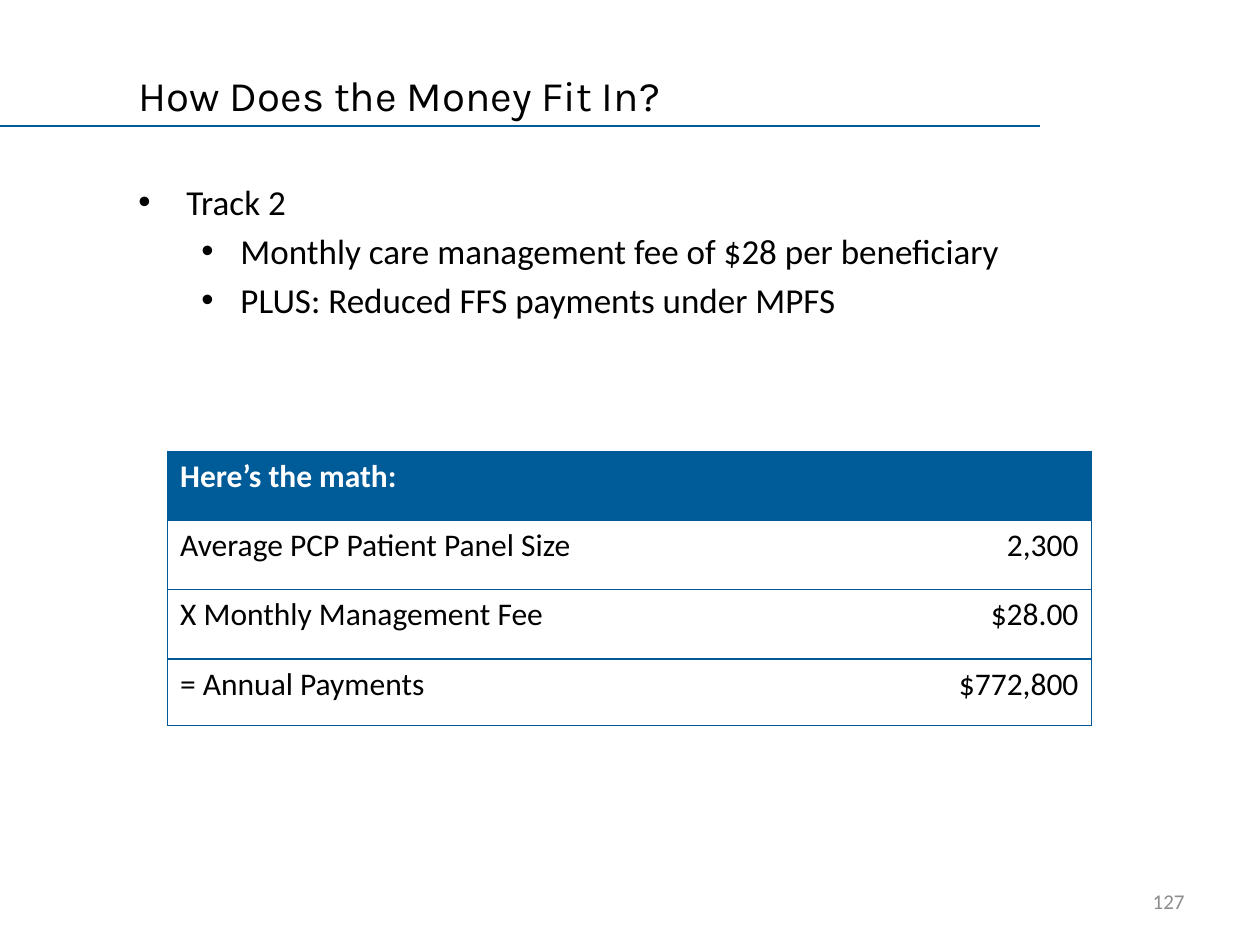
from dataclasses import dataclass

from lxml import etree
from pptx import Presentation
from pptx.dml.color import RGBColor
from pptx.enum import shapes, text
from pptx.oxml import ns
from pptx.util import Inches, Pt

RULE_BLUE = "005B99"
TABLE_BLUE = "005996"
BLACK, WHITE, GRAY = "000000", "FFFFFF", "8C8C8C"


@dataclass
class Bullet:
    words: str
    margin: float
    hanging: float


@dataclass
class MathRow:
    label: str
    value: str
    height: float = 0.55


BULLETS = [
    Bullet("Track 2", 0.38, 0.38),
    Bullet("Monthly care management fee of $28 per beneficiary", 0.81, 0.31),
    Bullet("PLUS: Reduced FFS payments under MPFS", 0.81, 0.31),
]
MATH_ROWS = [
    MathRow("Here’s the math:", ""),
    MathRow("Average PCP Patient Panel Size", "2,300"),
    MathRow("X Monthly Management Fee", "$28.00"),
    MathRow("= Annual Payments", "$772,800", 0.53),
]


def rgb(value: str) -> RGBColor:
    return RGBColor.from_string(value)


def add_child(parent, tag: str, **attributes: str):
    return etree.SubElement(parent, ns.qn(tag), **attributes)


def write(paragraph, words: str, size: float = 20, font: str = "Calibri",
          color: str = BLACK, bold: bool = False,
          align=text.PP_ALIGN.LEFT) -> None:
    paragraph.alignment = align
    run = paragraph.add_run()
    run.text = words
    run.font.size = Pt(size)
    run.font.name = font
    run.font.bold = bold
    run.font.color.rgb = rgb(color)


def add_text_frame(slide, left: float, top: float, width: float, height: float,
                   anchor=text.MSO_ANCHOR.TOP):
    shape = slide.shapes.add_textbox(
        Inches(left), Inches(top), Inches(width), Inches(height))
    shape.text_frame.word_wrap = True
    shape.text_frame.vertical_anchor = anchor
    return shape.text_frame


def set_bullet(paragraph, bullet: Bullet) -> None:
    properties = paragraph._p.get_or_add_pPr()
    properties.set("marL", str(Inches(bullet.margin)))
    properties.set("indent", str(-Inches(bullet.hanging)))
    add_child(properties, "a:buFont", typeface="Arial")
    add_child(properties, "a:buChar", char="•")


def set_borders(cell, visible: str) -> None:
    """Draw the sides named in visible (letters of LRTB) and hide the others."""
    properties = cell._tc.get_or_add_tcPr()
    for side in "LRTB":
        line = add_child(properties, f"a:ln{side}", w=str(Pt(0.75)))
        if side in visible:
            fill = add_child(line, "a:solidFill")
            add_child(fill, "a:srgbClr", val=TABLE_BLUE)
        else:
            add_child(line, "a:noFill")


def add_title(slide) -> None:
    title = slide.shapes.title
    title.left, title.top = Inches(1), Inches(0.5)
    title.width, title.height = Inches(7), Inches(0.5)
    title.text_frame.vertical_anchor = text.MSO_ANCHOR.MIDDLE
    write(title.text_frame.paragraphs[0], "How Does the Money Fit In?",
          size=24, font="Karla")


def add_title_rule(slide) -> None:
    rule = slide.shapes.add_connector(
        shapes.MSO_CONNECTOR.STRAIGHT, 0, Inches(1), Inches(8.25), Inches(1))
    rule.line.color.rgb = rgb(RULE_BLUE)
    rule.line.width = Pt(0.75)
    add_child(rule._element.spPr, "a:effectLst")


def add_bullets(slide, bullets: list[Bullet]) -> None:
    frame = add_text_frame(slide, 1, 1.38, 7.98, 4.95)
    for index, bullet in enumerate(bullets):
        paragraph = frame.add_paragraph() if index else frame.paragraphs[0]
        set_bullet(paragraph, bullet)
        paragraph.space_before = Pt(4 if index else 0)
        write(paragraph, bullet.words)


def add_math_table(slide, rows: list[MathRow]) -> None:
    table = slide.shapes.add_table(
        len(rows), 2, Inches(1.33), Inches(3.58), Inches(7.33),
        Inches(sum(row.height for row in rows))).table
    for index, row in enumerate(rows):
        header = index == 0
        table.rows[index].height = Inches(row.height)
        columns = [(row.label, text.PP_ALIGN.LEFT, "LTB"),
                   (row.value, text.PP_ALIGN.RIGHT, "RTB")]
        for column, (words, align, borders) in enumerate(columns):
            cell = table.cell(index, column)
            set_borders(cell, borders)
            cell.fill.solid()
            cell.fill.fore_color.rgb = rgb(RULE_BLUE if header else WHITE)
            if words:
                write(cell.text_frame.paragraphs[0], words, size=18, bold=header,
                      color=WHITE if header else BLACK, align=align)


def main() -> None:
    presentation = Presentation()
    presentation.slide_width, presentation.slide_height = Inches(10), Inches(7.5)
    slide = presentation.slides.add_slide(presentation.slide_layouts[5])

    # Heading
    add_title_rule(slide)
    add_title(slide)

    # Content
    add_bullets(slide, BULLETS)
    add_math_table(slide, MATH_ROWS)

    # Slide number
    number = add_text_frame(slide, 7.17, 6.95, 2.33, 0.4, text.MSO_ANCHOR.MIDDLE)
    write(number.paragraphs[0], "127", size=12, color=GRAY,
          align=text.PP_ALIGN.RIGHT)

    presentation.save("out.pptx")


if __name__ == "__main__":
    main()
